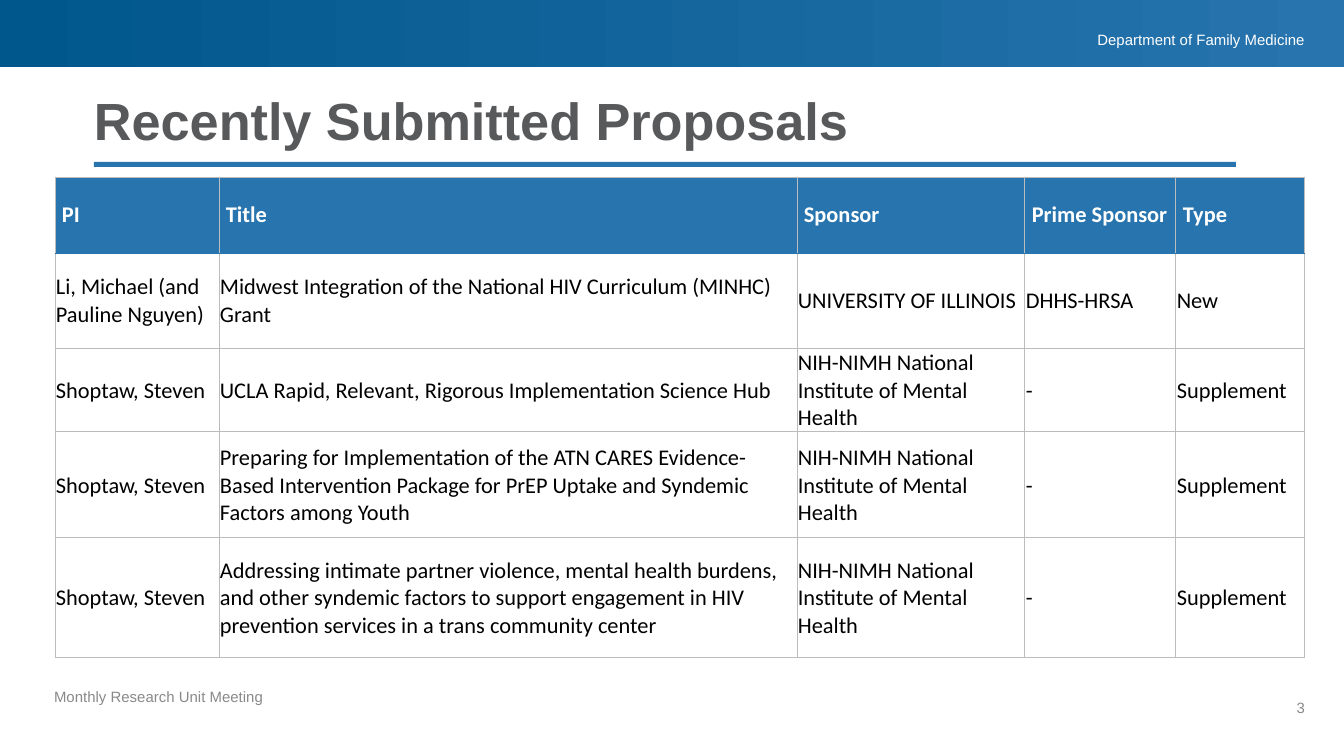
"""Build the slide listing recently submitted research proposals."""
from lxml import etree
from pptx import Presentation
from pptx.dml.color import RGBColor
from pptx.enum.shapes import MSO_SHAPE
from pptx.enum.text import MSO_ANCHOR, PP_ALIGN
from pptx.oxml.ns import qn
from pptx.util import Emu, Pt

RECTANGLE = MSO_SHAPE.RECTANGLE
TOP, MIDDLE, BOTTOM = MSO_ANCHOR.TOP, MSO_ANCHOR.MIDDLE, MSO_ANCHOR.BOTTOM
LEFT, RIGHT = PP_ALIGN.LEFT, PP_ALIGN.RIGHT

COLORS = {
    "navy": "00578B", "blue": "2774AE", "white": "FFFFFF", "black": "000000",
    "title": "58595B", "footer": "898989", "border": "BBBCBE",
}
EMU_PER_PX = 914400 / 134.4
SLIDE_SIZE = (1344, 756)
BANNER = (0, 0, 1344, 67)
TITLE_RULE = (94, 162, 1142, 5)

LABELS = [
    ("Department of Family Medicine", (968, 31, 337, 19), 8, "white", False, RIGHT, TOP, 1),
    ("Monthly Research Unit Meeting", (54, 690, 524, 54), 8, "footer", False, LEFT, TOP, 0.9),
    ("3", (1238, 699, 67, 54), 8, "footer", False, RIGHT, TOP, 1),
    ("Recently Submitted Proposals", (94, 94, 1142, 58), 28, "title", True, LEFT, BOTTOM, 0.9),
]

TABLE_ORIGIN = (55, 177)
COLUMN_WIDTHS = [164, 578, 228, 151, 129]
ROW_HEIGHTS = [76, 95, 84, 106, 120]
HEADER_INSETS = (7, 7, 7, 7)
BODY_INSETS = (1, 1, 1, 0)
NIMH = "NIH-NIMH National Institute of Mental Health"
ROWS = [
    ("PI", "Title", "Sponsor", "Prime Sponsor", "Type"),
    ("Li, Michael (and Pauline Nguyen)",
     "Midwest Integration of the National HIV Curriculum (MINHC) Grant",
     "UNIVERSITY OF ILLINOIS", "DHHS-HRSA", "New"),
    ("Shoptaw, Steven", "UCLA Rapid, Relevant, Rigorous Implementation Science Hub",
     NIMH, "-", "Supplement"),
    ("Shoptaw, Steven",
     "Preparing for Implementation of the ATN CARES Evidence-Based Intervention Package "
     "for PrEP Uptake and Syndemic Factors among Youth",
     NIMH, "-", "Supplement"),
    ("Shoptaw, Steven",
     "Addressing intimate partner violence, mental health burdens, and other syndemic "
     "factors to support engagement in HIV prevention services in a trans community center",
     NIMH, "-", "Supplement"),
]


def px(value):
    return Emu(round(value * EMU_PER_PX))


def rgb(name):
    return RGBColor.from_string(COLORS[name])


def set_insets(target, insets):
    (target.margin_left, target.margin_top,
     target.margin_right, target.margin_bottom) = map(px, insets)


def format_text(paragraph, font_name, size, color, bold):
    for run in paragraph.runs:
        run.font.name = font_name
        run.font.size = Pt(size)
        run.font.bold = bold
        run.font.color.rgb = rgb(color)


def add_bar(slide, box):
    shape = slide.shapes.add_shape(RECTANGLE, *map(px, box))
    shape.shadow.inherit = False
    shape.line.fill.background()
    shape.fill.solid()
    shape.fill.fore_color.rgb = rgb("blue")
    return shape


def add_label(slide, text, box, size, color, bold, alignment, anchor, spacing):
    text_frame = slide.shapes.add_textbox(*map(px, box)).text_frame
    text_frame.word_wrap = True
    text_frame.vertical_anchor = anchor
    set_insets(text_frame, (0, 0, 0, 0))
    text_frame.text = text
    paragraph = text_frame.paragraphs[0]
    paragraph.alignment = alignment
    paragraph.line_spacing = spacing
    format_text(paragraph, "Arial", size, color, bold)


def add_border(cell, side, color):
    properties = cell._tc.get_or_add_tcPr()
    line = etree.SubElement(properties, qn(f"a:ln{side}"), w=str(Pt(0.5)))
    fill = etree.SubElement(line, qn("a:solidFill"))
    etree.SubElement(fill, qn("a:srgbClr"), val=COLORS[color])


def add_proposals(slide):
    size = (sum(COLUMN_WIDTHS), sum(ROW_HEIGHTS))
    table = slide.shapes.add_table(
        len(ROWS), len(COLUMN_WIDTHS), *map(px, TABLE_ORIGIN + size)).table
    table.horz_banding = False
    for column, width in zip(table.columns, COLUMN_WIDTHS):
        column.width = px(width)
    for row, height in zip(table.rows, ROW_HEIGHTS):
        row.height = px(height)
    for row_index, values in enumerate(ROWS):
        header = row_index == 0
        seams = {0: "B", 1: "T"}
        for column_index, value in enumerate(values):
            cell = table.cell(row_index, column_index)
            cell.text = value
            cell.vertical_anchor = MIDDLE
            set_insets(cell, HEADER_INSETS if header else BODY_INSETS)
            for side in "LRTB":
                add_border(cell, side, "blue" if seams.get(row_index) == side else "border")
            cell.fill.solid()
            cell.fill.fore_color.rgb = rgb("blue" if header else "white")
            format_text(cell.text_frame.paragraphs[0], "Calibri", 12,
                        "white" if header else "black", header)


def main():
    presentation = Presentation()
    presentation.slide_width, presentation.slide_height = map(px, SLIDE_SIZE)
    slide = presentation.slides.add_slide(presentation.slide_layouts[6])
    add_bar(slide, TITLE_RULE)
    banner = add_bar(slide, BANNER)
    banner.fill.gradient()
    banner.fill.gradient_angle = 0
    for stop, color in zip(banner.fill.gradient_stops, ("navy", "blue")):
        stop.color.rgb = rgb(color)
    for label in LABELS:
        add_label(slide, *label)
    add_proposals(slide)
    presentation.save("out.pptx")


if __name__ == "__main__":
    main()
